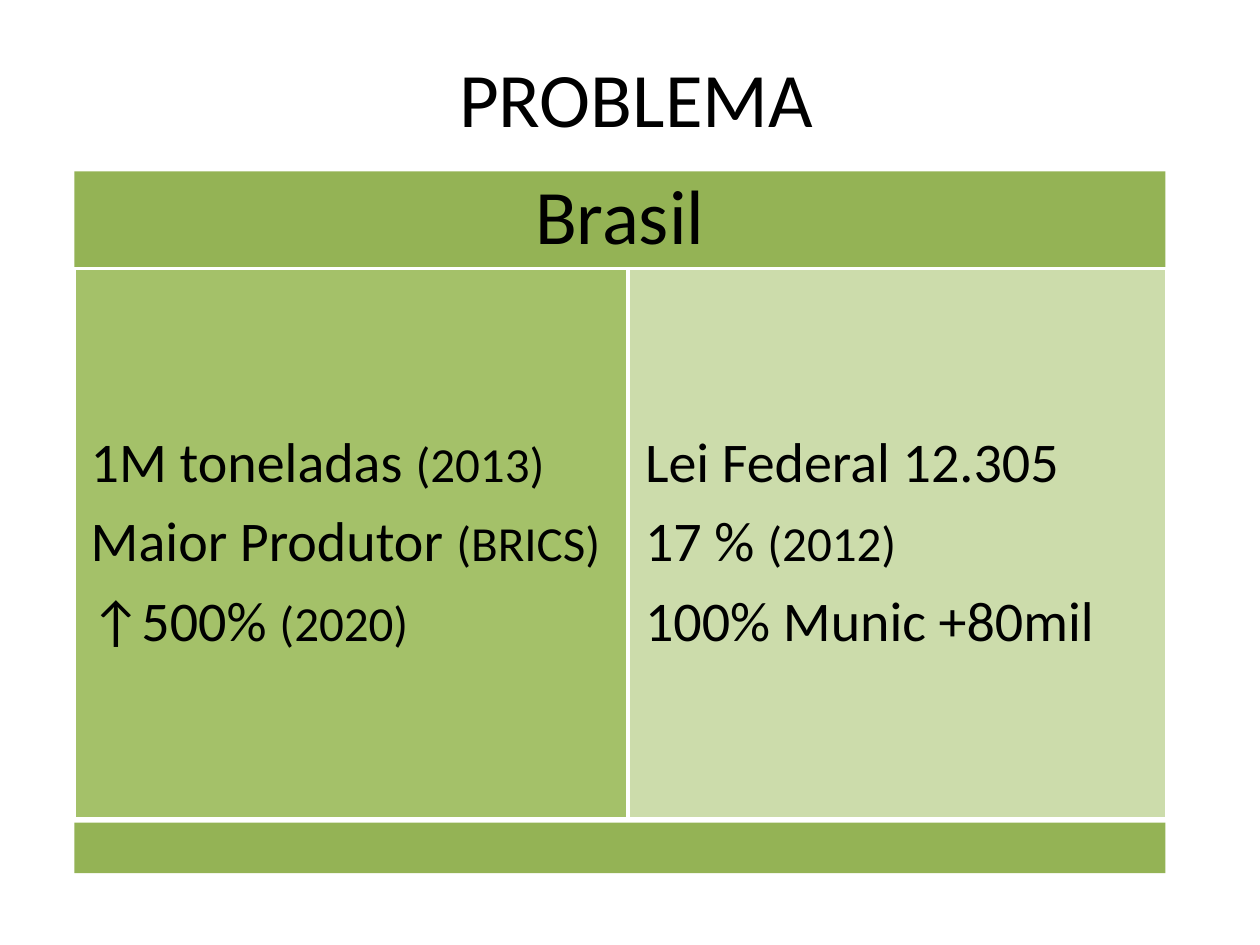
from dataclasses import dataclass

from lxml import etree
from pptx import Presentation
from pptx.dml.color import RGBColor
from pptx.enum.shapes import MSO_SHAPE
from pptx.enum.text import MSO_ANCHOR, PP_ALIGN
from pptx.oxml.ns import qn
from pptx.util import Inches, Pt

RECT = MSO_SHAPE.RECTANGLE
MIDDLE = MSO_ANCHOR.MIDDLE
CENTER = PP_ALIGN.CENTER
JUSTIFY = PP_ALIGN.JUSTIFY


@dataclass(frozen=True)
class Theme:
    font: str = "Calibri"
    ink: str = "000000"
    edge: str = "FFFFFF"
    band: str = "94B355"
    panel: str = "9BBB59"
    head: int = 44
    body: int = 32
    note: int = 28
    gap: int = 11


@dataclass(frozen=True)
class Line:
    main: str
    note: str = ""


@dataclass(frozen=True)
class Panel:
    left: float
    width: float
    alpha: int
    lines: tuple[Line, ...]


THEME = Theme()
LEFT, WIDTH = 0.59, 8.66
PANELS = (
    Panel(LEFT, 4.39, 90, (
        Line("1M toneladas ", "(2013)"),
        Line("Maior Produtor ", "(BRICS)"),
        Line("↑500% ", "(2020)"),
    )),
    Panel(4.99, 4.27, 50, (
        Line("Lei Federal 12.305"),
        Line("17 % ", "(2012)"),
        Line("100% Munic +80mil"),
    )),
)


def style(run, size: int) -> None:
    run.font.name = THEME.font
    run.font.size = Pt(size)
    run.font.color.rgb = RGBColor.from_string(THEME.ink)


def add_rect(slide, left: float, top: float, width: float, height: float,
             color: str):
    shape = slide.shapes.add_shape(
        RECT, Inches(left), Inches(top), Inches(width), Inches(height))
    shape.shadow.inherit = False
    shape.fill.solid()
    shape.fill.fore_color.rgb = RGBColor.from_string(color)
    shape.line.fill.background()
    return shape


def set_frame(shape, inset: float):
    frame = shape.text_frame
    frame.word_wrap = True
    frame.vertical_anchor = MIDDLE
    frame.margin_left = frame.margin_right = Inches(inset)
    frame.margin_top = frame.margin_bottom = Inches(inset)
    return frame


def add_panel(slide, panel: Panel) -> None:
    shape = add_rect(slide, panel.left, 2.13, panel.width, 4.37, THEME.panel)
    color = shape.fill._xPr.find(qn("a:solidFill"))[0]
    etree.SubElement(color, qn("a:alpha"), val=str(panel.alpha * 1000))
    shape.line.color.rgb = RGBColor.from_string(THEME.edge)
    shape.line.width = Pt(2)
    frame = set_frame(shape, 0.13)
    for index, line in enumerate(panel.lines):
        para = frame.add_paragraph() if index else frame.paragraphs[0]
        para.alignment = JUSTIFY
        para.line_spacing = 0.9
        para.space_after = Pt(THEME.gap)
        for text, size in ((line.main, THEME.body), (line.note, THEME.note)):
            if text:
                run = para.add_run()
                run.text = text
                style(run, size)


def add_title(slide) -> None:
    title = slide.shapes.title
    title.left, title.top = Inches(1.46), Inches(0.14)
    title.width, title.height = Inches(7.18), Inches(1.25)
    title.text_frame.text = "PROBLEMA"
    title.text_frame.vertical_anchor = MIDDLE
    para = title.text_frame.paragraphs[0]
    para.alignment = CENTER
    style(para.runs[0], THEME.head)


def add_bands(slide) -> None:
    header = add_rect(slide, LEFT, 1.36, WIDTH, 0.76, THEME.band)
    frame = set_frame(header, 0.18)
    frame.text = "Brasil"
    para = frame.paragraphs[0]
    para.alignment = CENTER
    para.line_spacing = 0.9
    style(para.runs[0], THEME.head)
    add_rect(slide, LEFT, 6.53, WIDTH, 0.4, THEME.band)


def main() -> None:
    deck = Presentation()
    deck.slide_width, deck.slide_height = Inches(10), Inches(7.5)
    slide = deck.slides.add_slide(deck.slide_layouts[5])
    add_title(slide)
    add_bands(slide)
    for panel in PANELS:
        add_panel(slide, panel)
    deck.save("out.pptx")


if __name__ == "__main__":
    main()
